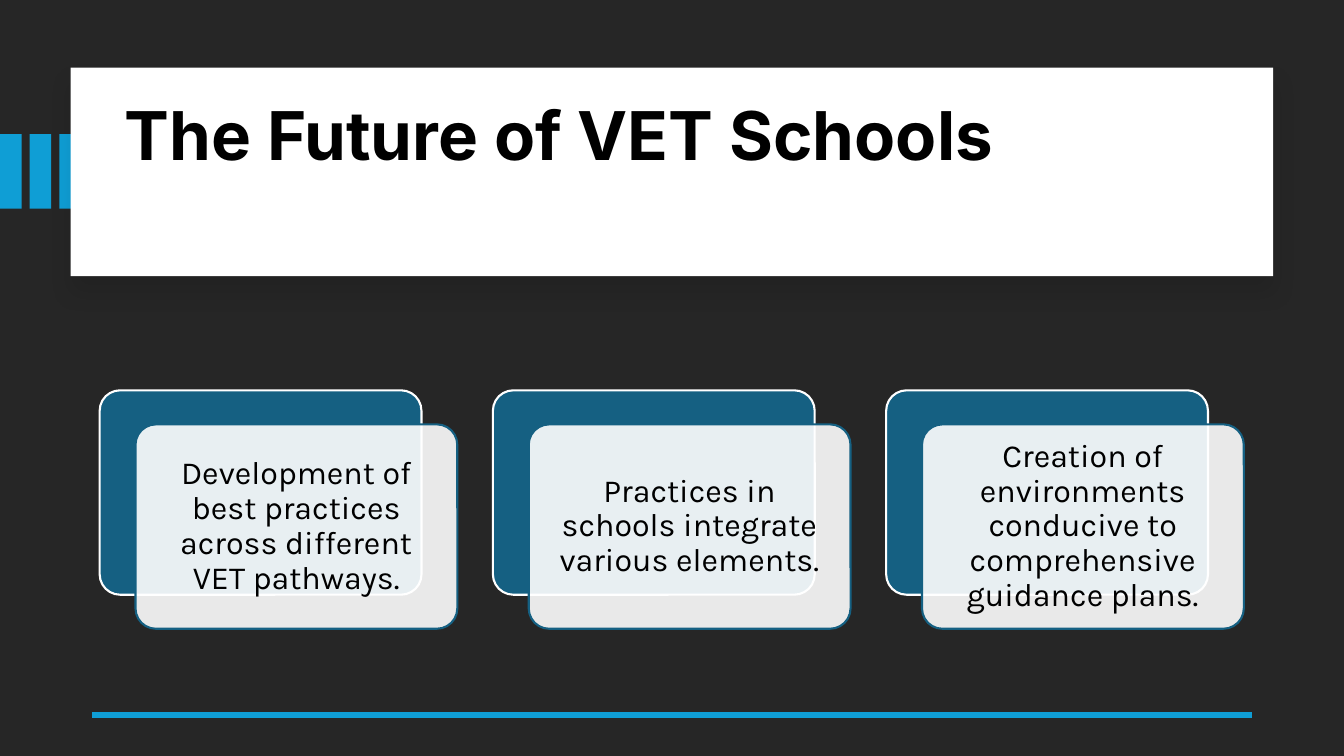
from lxml import etree
from pptx import Presentation
from pptx.dml.color import RGBColor
from pptx.enum import shapes, text
from pptx.oxml import ns
from pptx.util import Pt

DARK, WHITE, BLACK = "262626", "FFFFFF", "000000"
SKY, TEAL = "0F9ED5", "156082"

GOALS = [
    "Development of best practices across different VET pathways.",
    "Practices in schools integrate various elements.",
    "Creation of environments conducive to comprehensive guidance plans.",
]


def colour(value):
    return RGBColor.from_string(value)


def add_child(parent, tag, **attributes):
    return etree.SubElement(parent, ns.qn(tag), attributes)


def set_opacity(shape, percent):
    tint = shape.fill._xPr.find(ns.qn("a:solidFill"))[0]
    add_child(tint, "a:alpha", val=str(percent * 1000))


def add_drop_shadow(shape, blur, distance, percent):
    effects = shape._element.spPr.find(ns.qn("a:effectLst"))
    shadow = add_child(effects, "a:outerShdw", blurRad=str(Pt(blur)),
                       dist=str(Pt(distance)), dir="5400000",
                       algn="t", rotWithShape="0")
    tint = add_child(shadow, "a:srgbClr", val=BLACK)
    add_child(tint, "a:alpha", val=str(percent * 1000))


def add_block(slide, kind, left, top, width, height, fill, line=None):
    block = slide.shapes.add_shape(kind, Pt(left), Pt(top), Pt(width), Pt(height))
    block.shadow.inherit = False
    block.fill.solid()
    block.fill.fore_color.rgb = colour(fill)
    if line:
        block.line.color.rgb = colour(line)
        block.line.width = Pt(1.5)
    else:
        block.line.fill.background()
    return block


def add_rectangle(slide, *box, fill):
    return add_block(slide, shapes.MSO_SHAPE.RECTANGLE, *box, fill)


def add_card(slide, left, top, fill, line):
    card = add_block(slide, shapes.MSO_SHAPE.ROUNDED_RECTANGLE,
                     left, top, 229.9, 146, fill, line)
    card.adjustments[0] = 0.1
    return card


def write(frame, words, size, font, align, anchor, bold=False):
    frame.word_wrap = True
    frame.vertical_anchor = anchor
    paragraph = frame.paragraphs[0]
    paragraph.alignment = align
    paragraph.line_spacing = 0.9
    run = paragraph.add_run()
    run.text = words
    run.font.size = Pt(size)
    run.font.name = font
    run.font.bold = bold
    run.font.color.rgb = colour(BLACK)


def add_heading(slide, words):
    for index in range(3):
        add_rectangle(slide, index * 21.2, 95.8, 15.4, 53.2, fill=SKY)
    panel = add_rectangle(slide, 50.5, 48.3, 858.9, 149, fill=WHITE)
    add_drop_shadow(panel, blur=15, distance=11, percent=10)
    heading = slide.shapes.add_textbox(Pt(82.1), Pt(64.1), Pt(801.4), Pt(122.4))
    heading.text_frame.margin_top = Pt(9)
    write(heading.text_frame, words, 48, "Inter", text.PP_ALIGN.LEFT,
          text.MSO_ANCHOR.TOP, bold=True)


def add_footer_rule(slide):
    rule = slide.shapes.add_connector(shapes.MSO_CONNECTOR.STRAIGHT,
                                      Pt(894.3), Pt(510.5), Pt(66), Pt(510.5))
    rule.line.color.rgb = colour(SKY)
    rule.line.width = Pt(4.5)
    add_child(rule._element.spPr, "a:effectLst")


def add_goal(slide, left, top, words):
    add_card(slide, left, top, TEAL, WHITE)
    front = add_card(slide, left + 25.6, top + 24.3, WHITE, TEAL)
    set_opacity(front, 90)
    frame = front.text_frame
    frame.margin_left = frame.margin_right = Pt(7.2)
    frame.margin_top = frame.margin_bottom = Pt(7.2)
    write(frame, words, 23, "Karla", text.PP_ALIGN.CENTER, text.MSO_ANCHOR.MIDDLE)


def main():
    deck = Presentation()
    deck.slide_width, deck.slide_height = Pt(960), Pt(540)
    slide = deck.slides.add_slide(deck.slide_layouts[6])
    slide.background.fill.solid()
    slide.background.fill.fore_color.rgb = colour(DARK)
    add_heading(slide, "The Future of VET Schools")
    add_footer_rule(slide)
    for index, words in enumerate(GOALS):
        add_goal(slide, 71.2 + index * 280.9, 278.8, words)
    deck.save("out.pptx")


if __name__ == "__main__":
    main()
